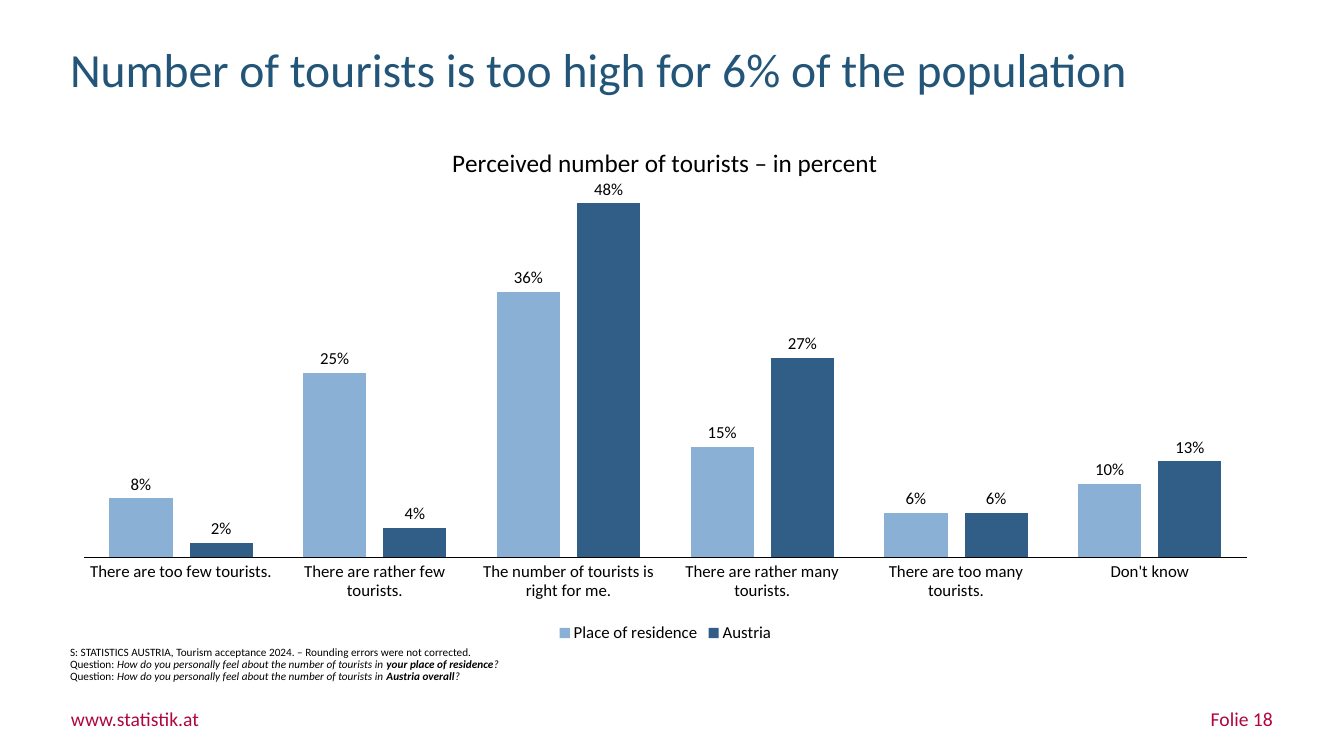
from pptx import Presentation
from pptx.chart.data import CategoryChartData
from pptx.dml.color import RGBColor
from pptx.enum.chart import XL_CHART_TYPE, XL_LABEL_POSITION, XL_LEGEND_POSITION, XL_TICK_MARK
from pptx.enum.text import MSO_ANCHOR, MSO_AUTO_SIZE, PP_ALIGN
from pptx.oxml import parse_xml
from pptx.oxml.ns import nsdecls, qn
from pptx.util import Emu, Pt

PX = 914400 / 100.8
FONT = "Calibri"
COLORS = {"title": "235578", "text": "000000", "footer": "B0063D",
          "residence": "8AB1D5", "austria": "315E87"}

prs = Presentation()
prs.slide_width, prs.slide_height = Emu(round(1344 * PX)), Emu(round(756 * PX))
s = prs.slides.add_slide(prs.slide_layouts[6])


def add_text(box, paragraphs, size, color, inset=(10, 5), anchor=MSO_ANCHOR.TOP,
             align=PP_ALIGN.LEFT, spacing=1.0, wrap=True):
    """Each paragraph is a list of (text, style); style holds "b" and/or "i"."""
    tf = s.shapes.add_textbox(*[Emu(round(v * PX)) for v in box]).text_frame
    tf.word_wrap, tf.vertical_anchor = wrap, anchor
    tf.auto_size = MSO_AUTO_SIZE.SHAPE_TO_FIT_TEXT
    tf.margin_left = tf.margin_right = Emu(round(inset[0] * PX))
    tf.margin_top = tf.margin_bottom = Emu(round(inset[1] * PX))
    for i, runs in enumerate(paragraphs):
        p = tf.add_paragraph() if i else tf.paragraphs[0]
        p.alignment, p.line_spacing = align, spacing
        for text, style in runs:
            r = p.add_run()
            r.text = text
            r.font.name, r.font.size = FONT, Pt(size)
            r.font.bold, r.font.italic = "b" in style, "i" in style
            r.font.color.rgb = RGBColor.from_string(COLORS[color])


def set_layout(element, index, target="", **fractions):
    """Place a chart part by fractions of the chart's size."""
    for old in element.findall(qn("c:layout")):
        element.remove(old)
    modes = '<c:xMode val="edge"/><c:yMode val="edge"/>'
    sizes = "".join(f'<c:{k} val="{v}"/>' for k, v in fractions.items())
    element.insert(index, parse_xml(
        f'<c:layout {nsdecls("c")}><c:manualLayout>{target}{modes}{sizes}'
        '</c:manualLayout></c:layout>'))


# Title
add_text((60, 41, 1211, 62), [[("Number of tourists is too high for 6% of the population", "")]],
         34, "title", spacing=0.9)

# Chart data
data = CategoryChartData(number_format="0%")
data.categories = ["There are too few tourists.", "There are rather few tourists.",
                   "The number of tourists is right for me.",
                   "There are rather many tourists.", "There are too many tourists.",
                   "Don't know"]
data.add_series("Place of residence", (0.08, 0.25, 0.36, 0.15, 0.06, 0.10))
data.add_series("Austria", (0.02, 0.04, 0.48, 0.27, 0.06, 0.13))
chart = s.shapes.add_chart(XL_CHART_TYPE.COLUMN_CLUSTERED,
                           *[Emu(round(v * PX)) for v in (60, 120, 1211, 527)], data).chart
chart.font.name, chart.font.size = FONT, Pt(12)
chart.font.color.rgb = RGBColor.from_string(COLORS["text"])

# Chart title and legend
chart.has_title = True
p = chart.chart_title.text_frame.paragraphs[0]
p.text = "Perceived number of tourists – in percent"
p.font.name, p.font.size, p.font.bold = FONT, Pt(18), False
p.font.color.rgb = RGBColor.from_string(COLORS["text"])
set_layout(chart.chart_title.element, 1, x=0.32, y=0.04)
chart.has_legend = True
chart.legend.position = XL_LEGEND_POSITION.BOTTOM
chart.legend.include_in_layout = False

# Axes
chart.value_axis.visible = False
chart.value_axis.has_major_gridlines = False
chart.value_axis.minimum_scale, chart.value_axis.maximum_scale = 0, 0.5
axis = chart.category_axis
axis.major_tick_mark = XL_TICK_MARK.NONE
axis.format.line.width = Pt(1)
axis.format.line.color.rgb = RGBColor.from_string(COLORS["text"])

# Columns and value labels
plot = chart.plots[0]
plot.gap_width, plot.overlap, plot.vary_by_categories = 80, -27, False
for series, color in zip(plot.series, ("residence", "austria")):
    series.format.fill.solid()
    series.format.fill.fore_color.rgb = RGBColor.from_string(COLORS[color])
    labels = series.data_labels
    labels.show_value = True
    labels.position = XL_LABEL_POSITION.OUTSIDE_END
    labels.number_format, labels.number_format_is_linked = "0%", False
    labels.font.name, labels.font.size = FONT, Pt(12)
    labels.font.color.rgb = RGBColor.from_string(COLORS["text"])
set_layout(chart.element.chart.plotArea, 0, '<c:layoutTarget val="inner"/>',
           x=0.02, y=0.13, w=0.96, h=0.7)

# Source and survey questions
notes = [[("S: STATISTICS AUSTRIA, Tourism acceptance 2024. – Rounding errors were not corrected.", "")]]
for place in ("your place of residence", "Austria overall"):
    notes.append([("Question: ", ""),
                  ("How do you personally feel about the number of tourists in ", "i"),
                  (place, "bi"), ("?", "i")])
add_text((60, 641, 1211, 47), notes, 8, "text", anchor=MSO_ANCHOR.BOTTOM, spacing=0.9)

# Footer
add_text((71, 707, 130, 24), [[("www.statistik.at", "")]], 14, "footer", inset=(0, 0), wrap=False)
add_text((971, 707, 302, 24), [[("Folie 18", "")]], 14, "footer", inset=(0, 0),
         align=PP_ALIGN.RIGHT)

prs.save("out.pptx")
